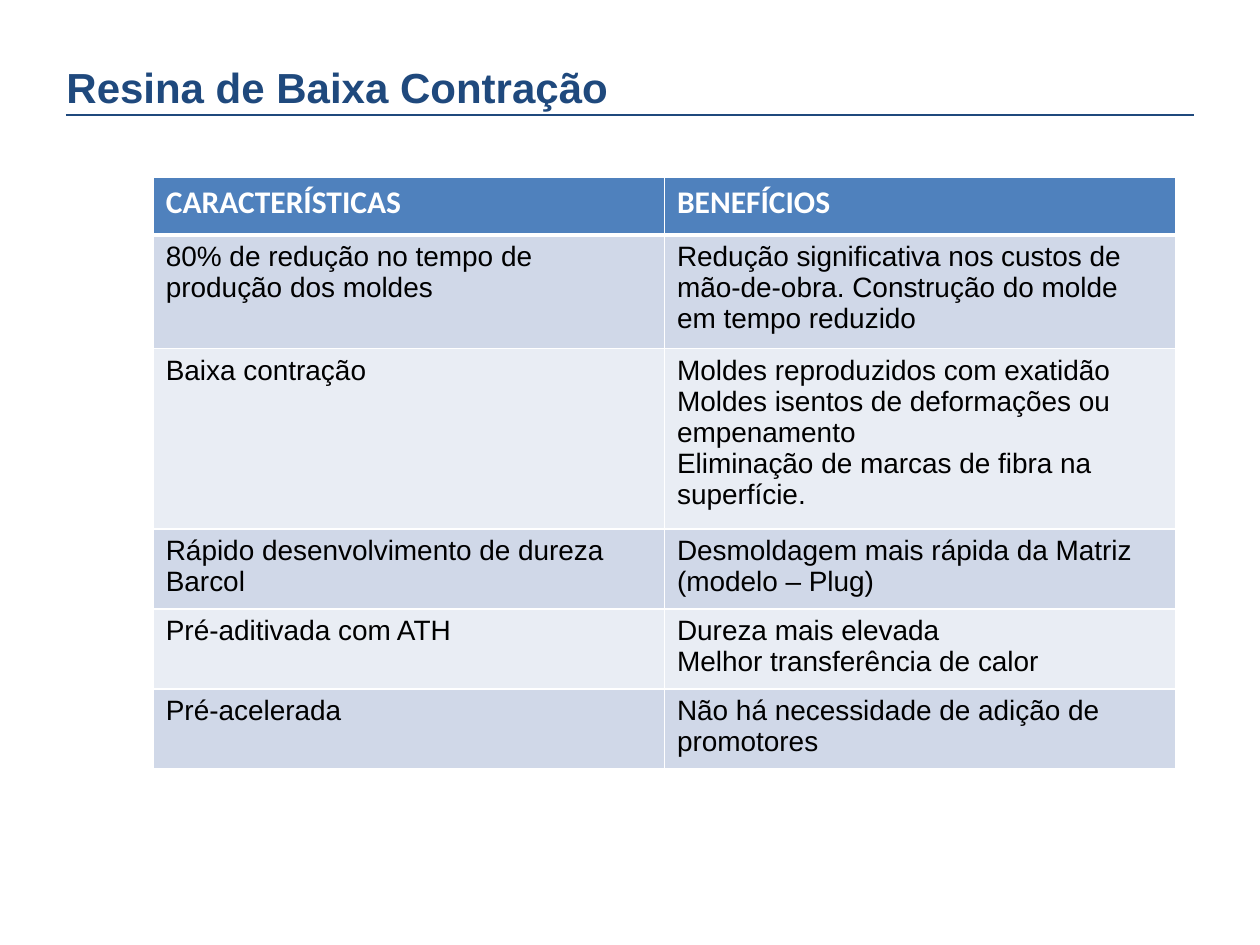
from lxml import etree
from pptx import Presentation
from pptx.dml.color import RGBColor
from pptx.enum.shapes import MSO_CONNECTOR
from pptx.enum.text import MSO_ANCHOR
from pptx.oxml.ns import qn
from pptx.util import Cm, Pt

STRAIGHT = MSO_CONNECTOR.STRAIGHT
TOP = MSO_ANCHOR.TOP
BLANK_LAYOUT = 6

COLORS = {
    "navy": "1F497D",
    "header": "4F81BD",
    "odd": "D0D8E8",
    "even": "E9EDF4",
    "white": "FFFFFF",
    "black": "000000",
}

FORMATS = {
    "title": {"name": "Arial", "size": Pt(24), "bold": True, "color": "navy"},
    "header": {"name": "Calibri", "size": Pt(18), "bold": True, "color": "white"},
    "body": {"name": "Arial", "size": Pt(16), "bold": False, "color": "black"},
}

ROWS = [
    (1.17, "CARACTERÍSTICAS", "BENEFÍCIOS"),
    (2.28, "80% de redução no tempo de produção dos moldes",
     "Redução significativa nos custos de mão-de-obra. "
     "Construção do molde em tempo reduzido"),
    (3.63, "Baixa contração",
     "Moldes reproduzidos com exatidão\n"
     "Moldes isentos de deformações ou empenamento\n"
     "Eliminação de marcas de fibra na superfície."),
    (1.61, "Rápido desenvolvimento de dureza Barcol",
     "Desmoldagem mais rápida da Matriz (modelo – Plug)"),
    (1.61, "Pré-aditivada com ATH",
     "Dureza mais elevada\nMelhor transferência de calor"),
    (1.61, "Pré-acelerada", "Não há necessidade de adição de promotores"),
]


def rgb(name):
    return RGBColor.from_string(COLORS[name])


def write_text(text_frame, text, format_name):
    text_frame.text = text
    for paragraph in text_frame.paragraphs:
        for run in paragraph.runs:
            for attribute, value in FORMATS[format_name].items():
                if attribute == "color":
                    run.font.color.rgb = rgb(value)
                else:
                    setattr(run.font, attribute, value)


def set_borders(cell, widths):
    properties = cell._tc.get_or_add_tcPr()
    for side, width in widths.items():
        line = etree.SubElement(properties, qn(f"a:ln{side}"), w=str(Pt(width)))
        fill = etree.SubElement(line, qn("a:solidFill"))
        etree.SubElement(fill, qn("a:srgbClr"), val=COLORS["white"])


def add_title(slide, left, top, width, height):
    rule_left, rule_top = left + 0.24, top + 1.2
    rule = slide.shapes.add_connector(
        STRAIGHT, Cm(rule_left), Cm(rule_top), Cm(left + width), Cm(rule_top))
    rule.line.color.rgb = rgb("navy")
    rule.line.width = Pt(1.5)
    etree.SubElement(rule._element.spPr, qn("a:effectLst"))

    title = slide.shapes.add_textbox(Cm(left), Cm(top), Cm(14.76), Cm(height))
    frame = title.text_frame
    frame.word_wrap = True
    frame.vertical_anchor = TOP
    write_text(frame, "Resina de Baixa Contração", "title")


def add_benefits_table(slide, left, top, width):
    height = sum(row[0] for row in ROWS)
    shape = slide.shapes.add_table(
        len(ROWS), 2, Cm(left), Cm(top), Cm(width), Cm(height))
    table = shape.table
    for column in table.columns:
        column.width = Cm(width / 2)
    for row_index, (row_height, *texts) in enumerate(ROWS):
        table.rows[row_index].height = Cm(row_height)
        is_header = row_index == 0
        fill_name = "header" if is_header else "odd" if row_index % 2 else "even"
        borders = {"L": 1, "R": 1, "T": 3 if row_index == 1 else 1,
                   "B": 3 if is_header else 1}
        for column_index, text in enumerate(texts):
            cell = table.cell(row_index, column_index)
            set_borders(cell, borders)
            cell.fill.solid()
            cell.fill.fore_color.rgb = rgb(fill_name)
            write_text(cell.text_frame, text, "header" if is_header else "body")


def main():
    presentation = Presentation()
    presentation.slide_width = Cm(25.4)
    presentation.slide_height = Cm(19.05)
    slide = presentation.slides.add_slide(presentation.slide_layouts[BLANK_LAYOUT])
    add_title(slide, 1.09, 1.12, 22.98, 1.6)
    add_benefits_table(slide, 3.09, 3.57, 20.61)
    presentation.save("out.pptx")


if __name__ == "__main__":
    main()
